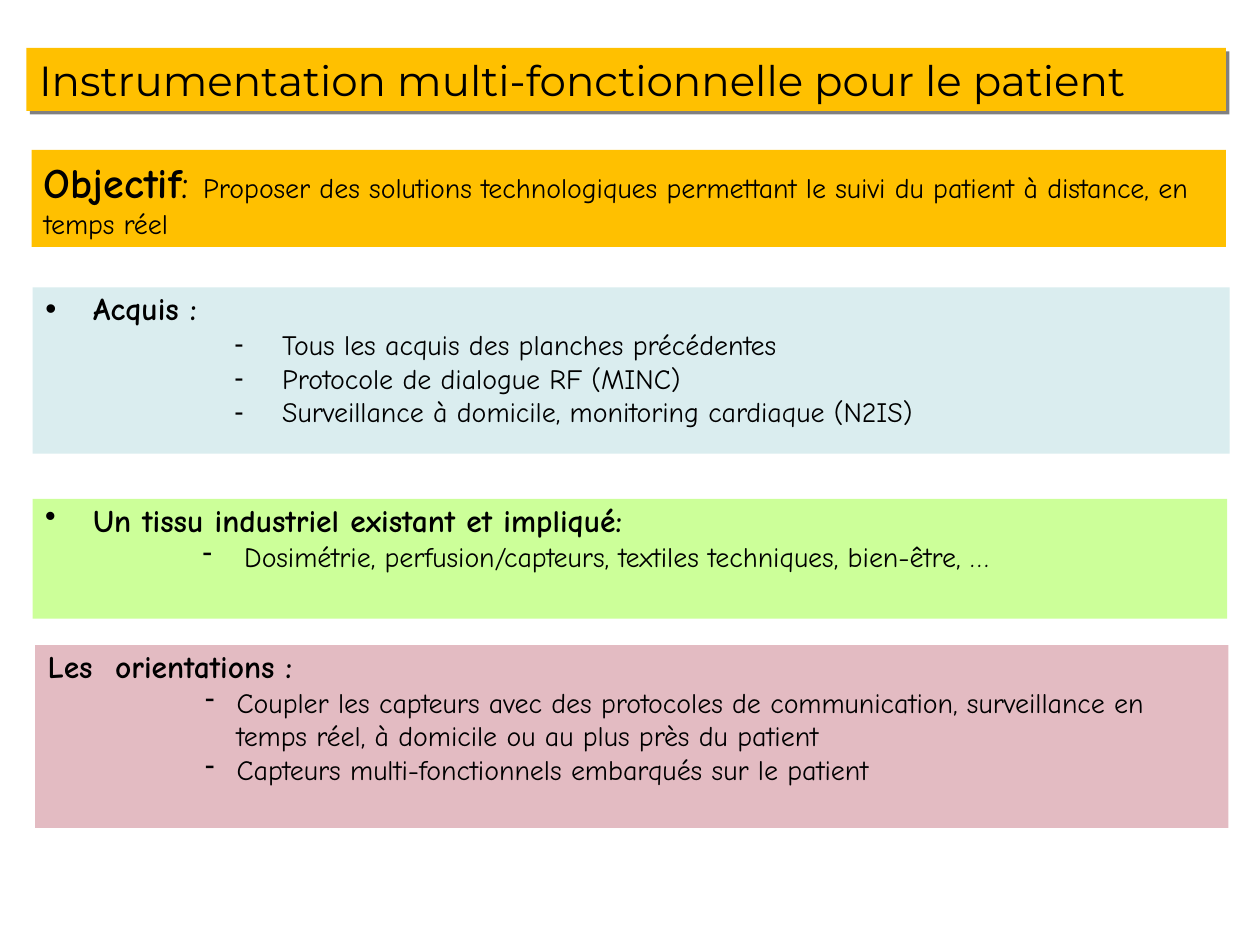
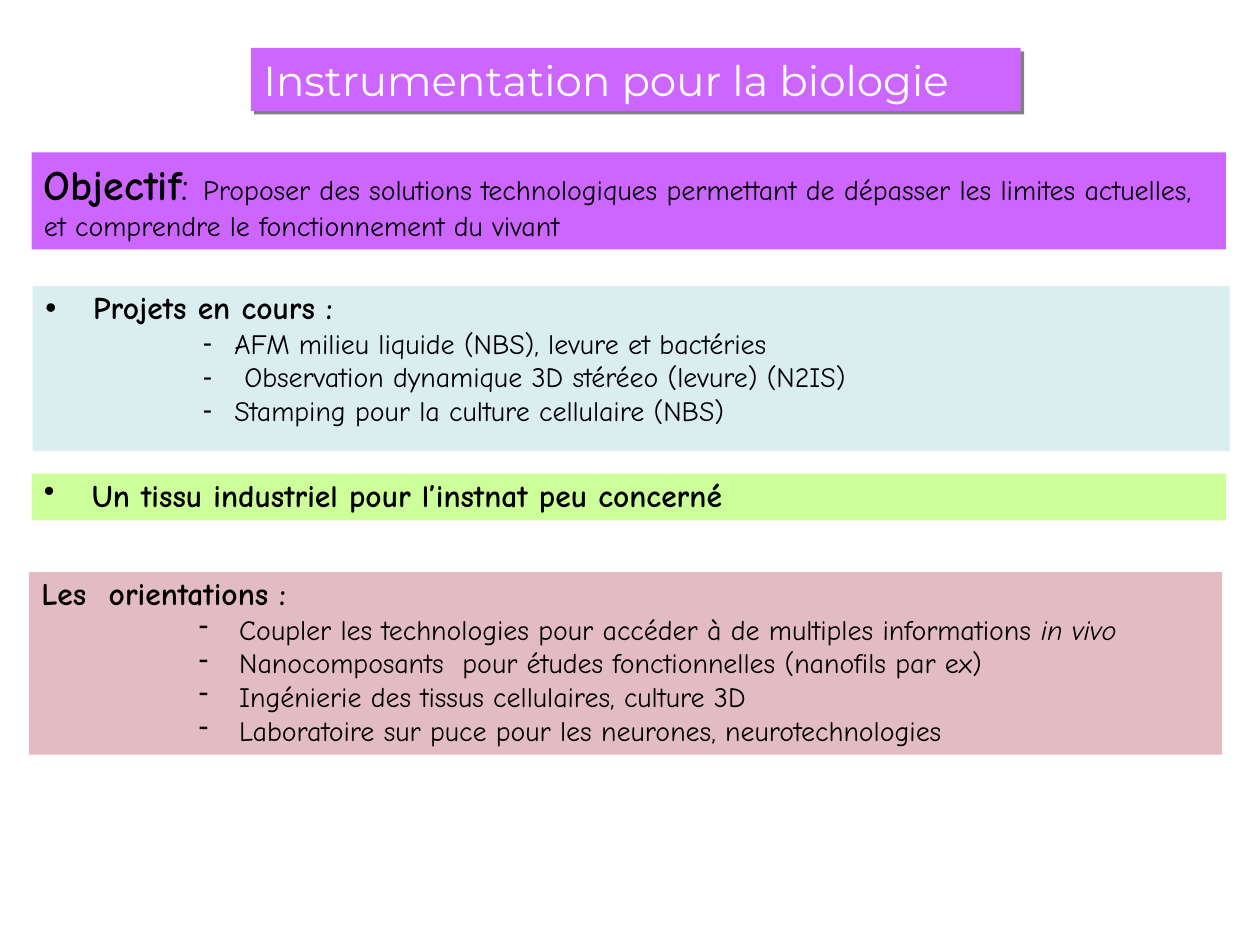
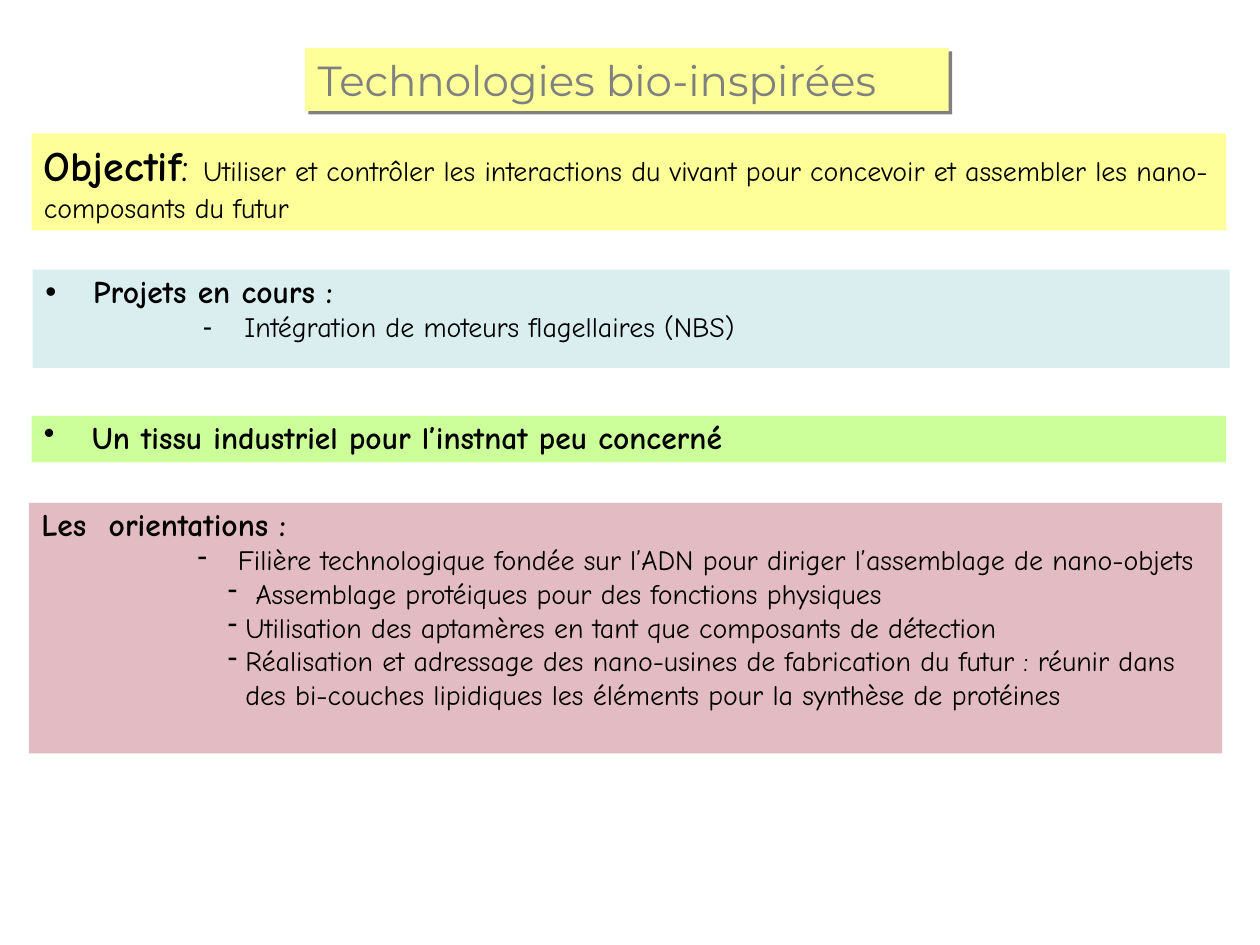
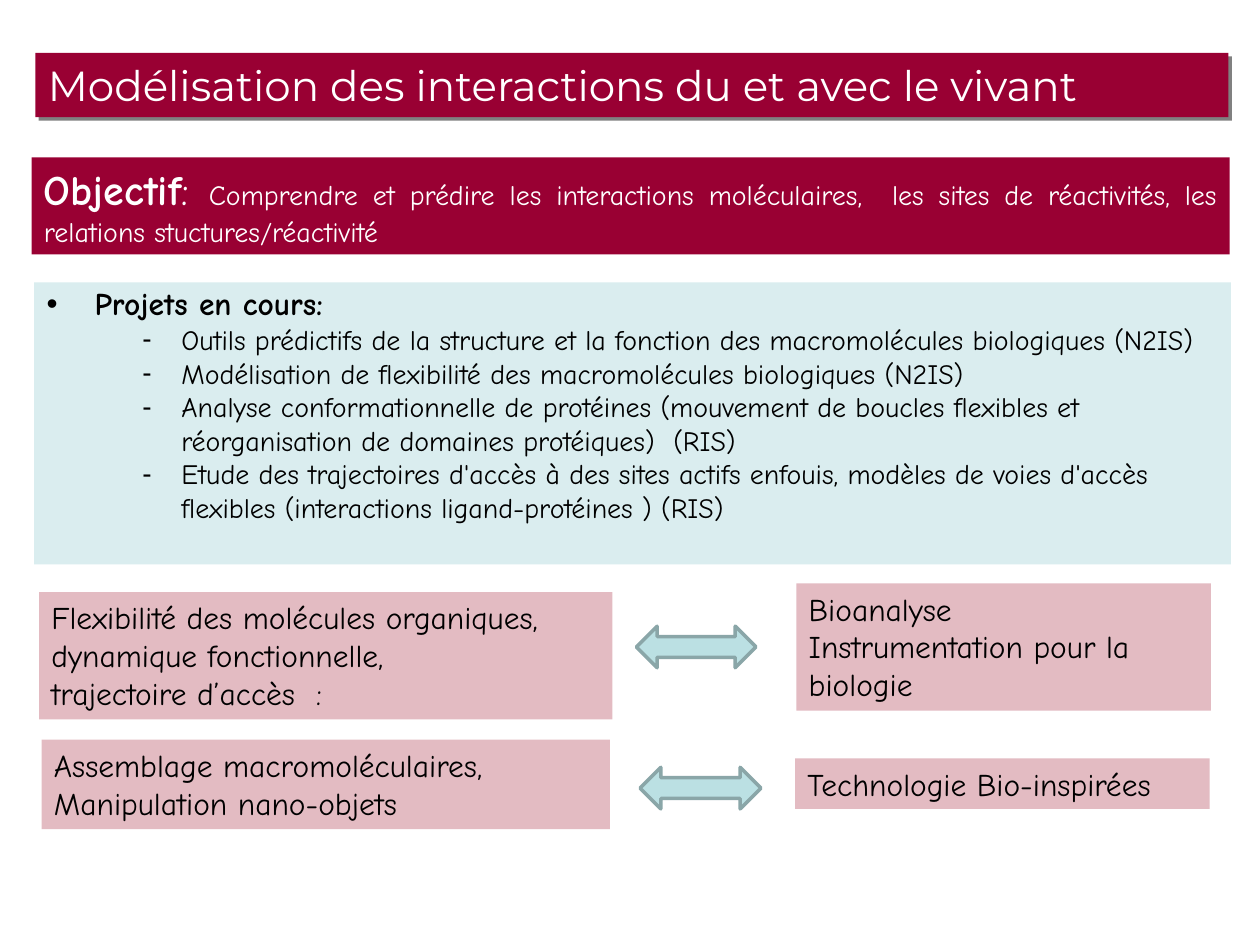
"""Build four slides on instrumentation, bio-inspired technologies and modelling."""
from dataclasses import dataclass

from pptx import Presentation
from pptx.dml.color import RGBColor
from pptx.enum.shapes import MSO_SHAPE
from pptx.enum.text import MSO_ANCHOR, MSO_AUTO_SIZE, PP_ALIGN
from pptx.oxml import parse_xml
from pptx.oxml.ns import nsdecls, qn
from pptx.util import Inches, Pt


@dataclass(frozen=True)
class Theme:
    black: str = "000000"
    white: str = "FFFFFF"
    gray: str = "808080"
    gold: str = "FFC000"
    violet: str = "CC66FF"
    yellow: str = "FFFF99"
    wine: str = "990033"
    blue: str = "DAEDEF"
    green: str = "CCFF99"
    pink: str = "E3BBC2"
    arrow: str = "BBE0E3"
    edge: str = "8AA6A8"
    display: str = "Montserrat"
    text: str = "Comic Neue"
    large: int = 24
    head: int = 18
    small: int = 16


T = Theme()


def paint(shape, area, color):
    shape.left, shape.top, shape.width, shape.height = map(Inches, area)
    shape.fill.solid()
    shape.fill.fore_color.rgb = RGBColor.from_string(color)
    shape.line.fill.background()
    shape.shadow.inherit = False
    frame = shape.text_frame
    frame.word_wrap = True
    frame.auto_size = MSO_AUTO_SIZE.NONE
    frame.vertical_anchor = MSO_ANCHOR.TOP
    return frame


def write(frame, runs, color=T.black, font=T.text, left=0, hang=0, mark=None,
          level=0, align=PP_ALIGN.LEFT, spacing=1.0):
    first = frame.paragraphs[0]
    para = frame.add_paragraph() if first.runs else first
    props = para._p.get_or_add_pPr()
    props.set("marL", str(Inches(left)))
    props.set("indent", str(-Inches(hang)))
    bullet = f'<a:buChar {nsdecls("a")} char="{mark}"/>' if mark else f'<a:buNone {nsdecls("a")}/>'
    props.append(parse_xml(bullet))
    para.level = level
    para.alignment = align
    para.line_spacing = spacing
    para.space_before = para.space_after = Pt(0)
    for text, size, bold, slant in runs:
        run = para.add_run()
        run.text = text
        run.font.name = font
        run.font.size = Pt(size)
        run.font.bold = bold
        run.font.italic = slant
        run.font.color.rgb = RGBColor.from_string(color)


pages = [
    dict(
        title="Instrumentation multi-fonctionnelle pour le patient",
        band=(0.21, 0.38, 9.52, 0.5), fill=T.gold, ink=T.black,
        goal="Proposer des solutions technologiques permettant le suivi du patient à distance, en temps réel",
        spot=(0.25, 1.19, 9.48, 0.77), tint=T.black, align=PP_ALIGN.LEFT,
        panels=[
            ((0.26, 2.28, 9.5, 1.32), T.blue, "Acquis :", [
                (1.88, 0.38, ["Tous les acquis des planches précédentes",
                              "Protocole de dialogue RF (MINC)",
                              "Surveillance à domicile, monitoring cardiaque (N2IS)"])]),
            ((0.26, 3.96, 9.48, 0.95), T.green, "Un tissu industriel existant et impliqué:", [
                (1.58, 0.33, ["Dosimétrie, perfusion/capteurs, textiles techniques, bien-être, …"])]),
            ((0.28, 5.12, 9.47, 1.45), T.pink, "Les  orientations :", [
                (1.5, 0.25, ["Coupler les capteurs avec des protocoles de communication, surveillance en "
                             "temps réel, à domicile ou au plus près du patient",
                             "Capteurs multi-fonctionnels embarqués sur le patient"])]),
        ],
    ),
    dict(
        title="Instrumentation pour la biologie",
        band=(1.99, 0.38, 6.11, 0.5), fill=T.violet, ink=T.white,
        goal="Proposer des solutions technologiques permettant de dépasser les limites actuelles, "
             "et comprendre le fonctionnement du vivant",
        spot=(0.25, 1.21, 9.48, 0.77), tint=T.black, align=PP_ALIGN.LEFT,
        panels=[
            ((0.26, 2.27, 9.5, 1.31), T.blue, "Projets en cours :", [
                (1.5, 0.25, ["AFM milieu liquide (NBS), levure et bactéries"]),
                (1.58, 0.33, ["Observation dynamique 3D stéréeo (levure) (N2IS)"]),
                (1.5, 0.25, ["Stamping pour la culture cellulaire (NBS)"])]),
            ((0.25, 3.76, 9.48, 0.37), T.green, "Un tissu industriel pour l’instnat peu concerné", []),
            ((0.23, 4.54, 9.47, 1.45), T.pink, "Les  orientations :", [
                (1.57, 0.32, ["Coupler les technologies pour accéder à de multiples informations *in vivo",
                              "Nanocomposants  pour études fonctionnelles (nanofils par ex)",
                              "Ingénierie des tissus cellulaires, culture 3D",
                              "Laboratoire sur puce pour les neurones, neurotechnologies"])]),
        ],
    ),
    dict(
        title="Technologies bio-inspirées",
        band=(2.42, 0.38, 5.11, 0.5), fill=T.yellow, ink=T.gray,
        goal="Utiliser et contrôler les interactions du vivant pour concevoir et assembler les "
             "nano-composants du futur",
        spot=(0.25, 1.06, 9.48, 0.77), tint=T.black, align=PP_ALIGN.LEFT,
        panels=[
            ((0.26, 2.14, 9.5, 0.78), T.blue, "Projets en cours :", [
                (1.58, 0.33, ["Intégration de moteurs flagellaires (NBS)"])]),
            ((0.25, 3.3, 9.48, 0.37), T.green, "Un tissu industriel pour l’instnat peu concerné", []),
            ((0.23, 3.99, 9.47, 1.99), T.pink, "Les  orientations :", [
                (1.56, 0.32, ["Filière technologique fondée sur l’ADN pour diriger l’assemblage de nano-objets"]),
                (1.7, 0.22, ["Assemblage protéiques pour des fonctions physiques"]),
                (1.62, 0.14, ["Utilisation des aptamères en tant que composants de détection",
                              "Réalisation et adressage des nano-usines de fabrication du futur : réunir dans "
                              "des bi-couches lipidiques les éléments pour la synthèse de protéines"])]),
        ],
    ),
    dict(
        title="Modélisation des interactions du et avec le vivant",
        band=(0.28, 0.42, 9.47, 0.51), fill=T.wine, ink=T.white,
        goal="Comprendre et prédire les interactions moléculaires,  les sites de réactivités, les "
             "relations stuctures/réactivité",
        spot=(0.25, 1.25, 9.51, 0.77), tint=T.white, align=PP_ALIGN.JUSTIFY,
        panels=[
            ((0.27, 2.24, 9.5, 2.24), T.blue, "Projets en cours:", [
                (1.07, 0.31, ["Outils prédictifs de la structure et la fonction des macromolécules "
                              "biologiques (N2IS)",
                              "Modélisation de flexibilité des macromolécules biologiques (N2IS)",
                              "Analyse conformationnelle de protéines (mouvement de boucles flexibles et "
                              "réorganisation de domaines protéiques)  (RIS)",
                              "Etude des trajectoires d'accès à des sites actifs enfouis, modèles de voies "
                              "d'accès flexibles (interactions ligand-protéines ) (RIS)"])]),
        ],
    ),
]

deck = Presentation()
deck.slide_width, deck.slide_height = Inches(10), Inches(7.5)

for page in pages:
    slide = deck.slides.add_slide(deck.slide_layouts[1])
    title = slide.shapes.title
    frame = paint(title, page["band"], page["fill"])
    write(frame, [(page["title"], T.large, False, False)], page["ink"], T.display)
    title._element.spPr.find(qn("a:effectLst")).append(parse_xml(
        f'<a:outerShdw {nsdecls("a")} dist="{Pt(2.8)}" dir="2700000" algn="ctr" rotWithShape="0">'
        f'<a:srgbClr val="{T.gray}"/></a:outerShdw>'))

    goal = slide.shapes.add_shape(MSO_SHAPE.RECTANGLE, 0, 0, 0, 0)
    frame = paint(goal, page["spot"], page["fill"])
    write(frame, [("Objectif", T.large, True, False), (": ", T.large, False, False),
                  (page["goal"], T.small, False, False)], page["tint"], align=page["align"])

    for area, color, head, groups in page["panels"]:
        if color == T.blue:
            panel = slide.placeholders[1]
        else:
            panel = slide.shapes.add_shape(MSO_SHAPE.RECTANGLE, 0, 0, 0, 0)
        frame = paint(panel, area, color)
        mark, left = (None, 0) if color == T.pink else ("•", 0.38)
        write(frame, [(head, T.head, True, False)], left=left, hang=left, mark=mark, spacing=0.9)
        for left, hang, items in groups:
            for item in items:
                runs = [(part, T.small, False, spot == 1) for spot, part in enumerate(item.split("*"))]
                write(frame, runs, left=left, hang=hang, mark="-", level=3)

notes = [
    ((0.31, 4.7, 4.55, 1.01), ["Flexibilité des molécules organiques,", "dynamique fonctionnelle,",
                               "trajectoire d’accès  :"]),
    ((0.33, 5.87, 4.51, 0.71), ["Assemblage macromoléculaires,", "Manipulation nano-objets"]),
    ((6.32, 4.63, 3.29, 1.01), ["Bioanalyse", "Instrumentation pour la biologie"]),
    ((6.31, 6.02, 3.29, 0.4), ["Technologie Bio-inspirées"]),
]
for area, lines in notes:
    frame = paint(slide.shapes.add_shape(MSO_SHAPE.RECTANGLE, 0, 0, 0, 0), area, T.pink)
    for line in lines:
        write(frame, [(line, T.head, False, False)])

for area in [(5.05, 4.97, 0.95, 0.33), (5.08, 6.09, 0.96, 0.33)]:
    arrow = slide.shapes.add_shape(MSO_SHAPE.LEFT_RIGHT_ARROW, 0, 0, 0, 0)
    paint(arrow, area, T.arrow)
    arrow.line.color.rgb = RGBColor.from_string(T.edge)
    arrow.line.width = Pt(2)

deck.save("out.pptx")
